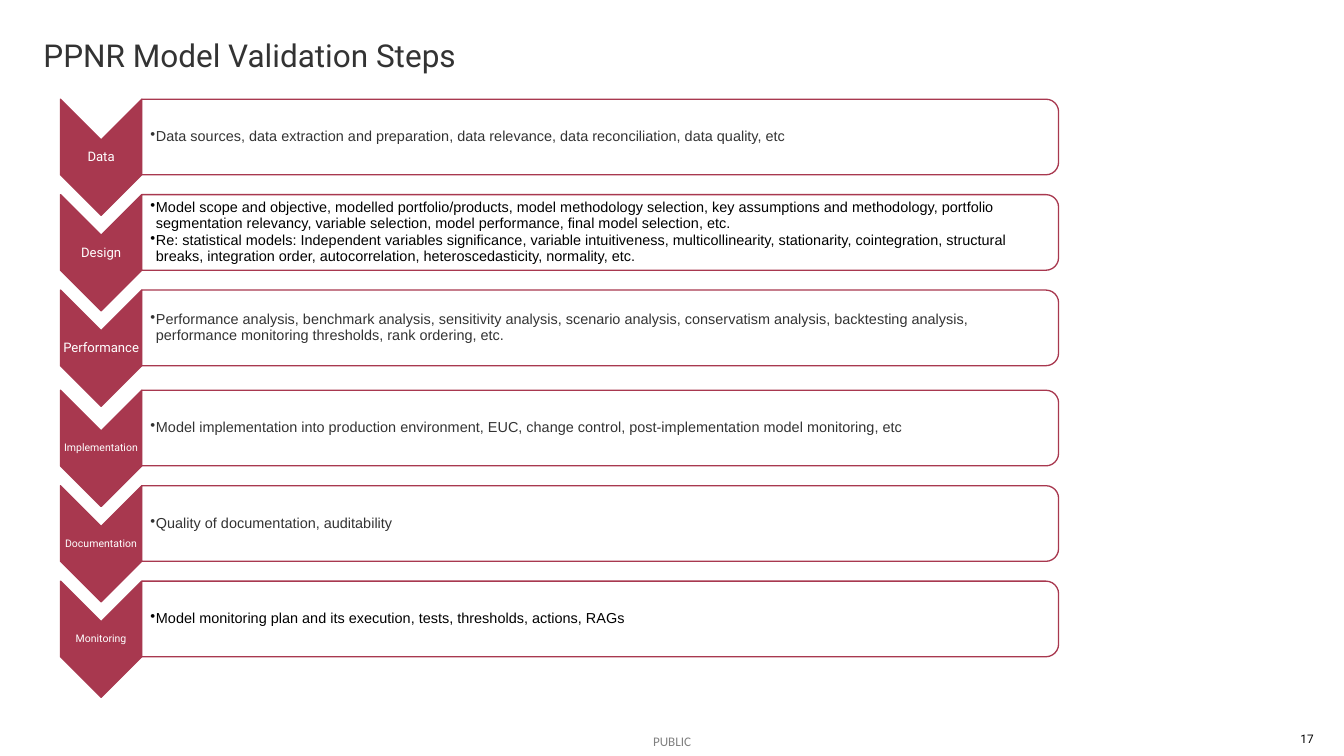
from lxml import etree
from pptx import Presentation
from pptx.dml.color import RGBColor
from pptx.enum.shapes import MSO_SHAPE
from pptx.enum.text import MSO_ANCHOR, MSO_AUTO_SIZE, PP_ALIGN
from pptx.oxml.ns import qn
from pptx.util import Inches, Pt

CHEVRON = MSO_SHAPE.CHEVRON
ROUNDED_PANEL = MSO_SHAPE.ROUND_2_SAME_RECTANGLE
TOP, MIDDLE = MSO_ANCHOR.TOP, MSO_ANCHOR.MIDDLE
LEFT, CENTER, RIGHT = PP_ALIGN.LEFT, PP_ALIGN.CENTER, PP_ALIGN.RIGHT
NO_AUTOFIT = MSO_AUTO_SIZE.NONE

TITLE_ONLY = 5
CRIMSON, WHITE, BLACK, CHARCOAL, GRAY = "A8384F", "FFFFFF", "000000", "333333", "808080"

STEP_PITCH = 1.01
CHEVRON_WIDTH, CHEVRON_HEIGHT = 0.86, 1.23
PANEL_WIDTH, PANEL_HEIGHT = 9.7, 0.8

# Each group: top, label size, steps as (label, text colour, bullets)
STEP_GROUPS = [
    (1.05, 10, [
        ("Data", CHARCOAL, [
            "Data sources, data extraction and preparation, data relevance, "
            "data reconciliation, data quality, etc"]),
        ("Design", BLACK, [
            "Model scope and objective, modelled portfolio/products, model methodology "
            "selection, key assumptions and methodology, portfolio segmentation relevancy, "
            "variable selection, model performance, final model selection, etc.",
            "Re: statistical models: Independent variables significance, variable "
            "intuitiveness, multicollinearity, stationarity, cointegration, structural "
            "breaks, integration order, autocorrelation, heteroscedasticity, normality, etc."]),
        ("Performance", CHARCOAL, [
            "Performance analysis, benchmark analysis, sensitivity analysis, scenario "
            "analysis, conservatism analysis, backtesting analysis, performance monitoring "
            "thresholds, rank ordering, etc."]),
    ]),
    (4.13, 8, [
        ("Implementation", CHARCOAL, [
            "Model implementation into production environment, EUC, change control, "
            "post-implementation model monitoring, etc"]),
        ("Documentation", CHARCOAL, ["Quality of documentation, auditability"]),
        ("Monitoring", BLACK, [
            "Model monitoring plan and its execution, tests, thresholds, actions, RAGs"]),
    ]),
]


def color(hex_string):
    return RGBColor.from_string(hex_string)


def set_attributes(target, values):
    for name, value in values.items():
        setattr(target, name, value)


def format_frame(frame, anchor, margin=0.0, margin_left=None):
    inset = Inches(margin)
    set_attributes(frame, {
        "word_wrap": True, "auto_size": NO_AUTOFIT, "vertical_anchor": anchor,
        "margin_left": inset if margin_left is None else Inches(margin_left),
        "margin_right": inset, "margin_top": inset, "margin_bottom": inset})


def write_paragraph(paragraph, text, font_name, size, hex_string, **layout):
    set_attributes(paragraph, layout)
    run = paragraph.add_run()
    run.text = text
    set_attributes(run.font, {"name": font_name, "size": Pt(size)})
    run.font.color.rgb = color(hex_string)


def add_bullet(paragraph):
    properties = paragraph._p.get_or_add_pPr()
    properties.set("marL", str(Inches(0.06)))
    properties.set("indent", str(-Inches(0.06)))
    etree.SubElement(properties, qn("a:buChar"), char="•")


def add_text_box(shapes, box, anchor, margin=0.0, margin_left=None):
    frame = shapes.add_textbox(*map(Inches, box)).text_frame
    format_frame(frame, anchor, margin, margin_left)
    return frame


def add_turned_shape(shapes, kind, box, fill):
    """Place a shape turned by 90 degrees so that it covers the given box."""
    left, top, width, height = box
    shape = shapes.add_shape(
        kind, Inches(left + (width - height) / 2), Inches(top + (height - width) / 2),
        Inches(height), Inches(width))
    shape.rotation = 90
    shape.shadow.inherit = False
    shape.fill.solid()
    shape.fill.fore_color.rgb = color(fill)
    shape.line.color.rgb = color(CRIMSON)
    shape.line.width = Pt(1)
    return shape


def add_step(shapes, left, top, label, label_size, text_color, bullets):
    # Chevron and its label
    add_turned_shape(shapes, CHEVRON, (left, top, CHEVRON_WIDTH, CHEVRON_HEIGHT), CRIMSON)
    frame = add_text_box(shapes, (left, top + 0.43, CHEVRON_WIDTH, 0.37), MIDDLE, 0.01)
    write_paragraph(frame.paragraphs[0], label, "Roboto", label_size, WHITE,
                    alignment=CENTER, line_spacing=0.9)

    # Panel and its bullets
    panel_left = left + CHEVRON_WIDTH
    panel = add_turned_shape(
        shapes, ROUNDED_PANEL, (panel_left, top, PANEL_WIDTH, PANEL_HEIGHT), WHITE)
    panel_color = panel._element.spPr.find(qn("a:solidFill"))[0]
    etree.SubElement(panel_color, qn("a:alpha"), val="90000")
    frame = add_text_box(
        shapes, (panel_left, top + 0.04, PANEL_WIDTH - 0.03, 0.72), MIDDLE, 0.01, 0.09)
    for index, text in enumerate(bullets):
        paragraph = frame.add_paragraph() if index else frame.paragraphs[0]
        add_bullet(paragraph)
        write_paragraph(paragraph, text, "Arial", 11, text_color,
                        level=1, line_spacing=0.9, space_after=Pt(1.5))


def add_step_group(slide, left, top, label_size, steps):
    shapes = slide.shapes.add_group_shape().shapes
    for index, (label, text_color, bullets) in enumerate(steps):
        add_step(shapes, left, top + index * STEP_PITCH, label, label_size,
                 text_color, bullets)


def add_title(slide, left, top, width, height):
    title = slide.shapes.title
    set_attributes(title, {"left": Inches(left), "top": Inches(top),
                           "width": Inches(width), "height": Inches(height)})
    format_frame(title.text_frame, TOP)
    write_paragraph(title.text_frame.paragraphs[0], "PPNR Model Validation Steps",
                    "Roboto", 24, CHARCOAL, alignment=LEFT, line_spacing=0.8)


def add_footer(slide):
    frame = add_text_box(slide.shapes, (6.91, 7.76, 0.44, 0.17), TOP)
    write_paragraph(frame.paragraphs[0], "PUBLIC", "Calibri", 10, GRAY)
    frame = add_text_box(slide.shapes, (13.49, 7.74, 0.41, 0.15), MIDDLE)
    write_paragraph(frame.paragraphs[0], "17", "Roboto", 9, BLACK, alignment=RIGHT)


def main():
    presentation = Presentation()
    presentation.slide_width = Inches(14.22)
    presentation.slide_height = Inches(8)
    slide = presentation.slides.add_slide(presentation.slide_layouts[TITLE_ONLY])
    add_title(slide, 0.46, 0.46, 13.31, 0.33)
    for top, label_size, steps in STEP_GROUPS:
        add_step_group(slide, 0.64, top, label_size, steps)
    add_footer(slide)
    presentation.save("out.pptx")


if __name__ == "__main__":
    main()
